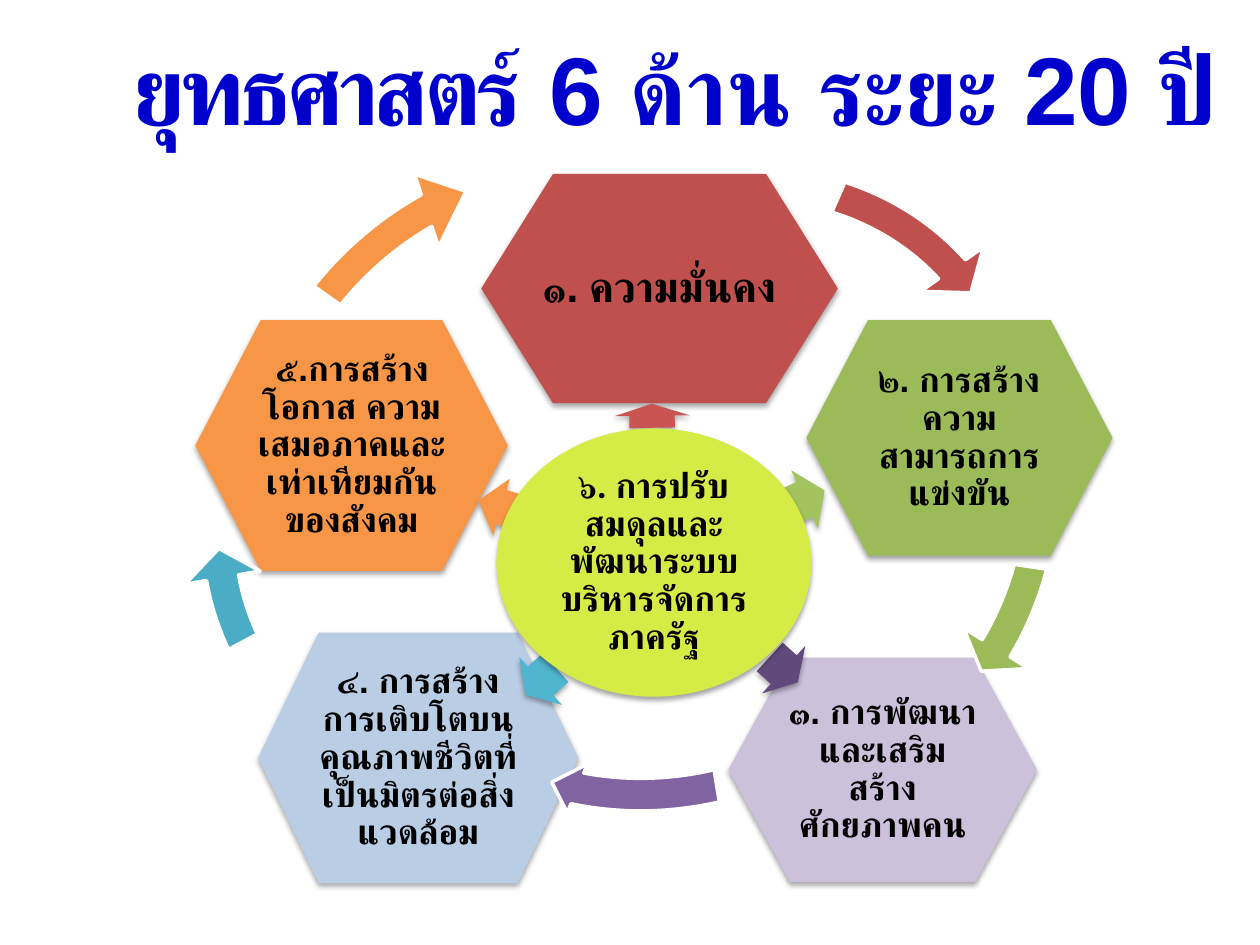
from lxml.etree import SubElement
from pptx import Presentation
from pptx.dml.color import RGBColor
from pptx.enum.shapes import MSO_SHAPE
from pptx.enum.text import MSO_ANCHOR, MSO_AUTO_SIZE, PP_ALIGN
from pptx.oxml.ns import qn
from pptx.util import Inches, Pt

WHITE = RGBColor(0xFF, 0xFF, 0xFF)
BLACK = RGBColor(0x00, 0x00, 0x00)
TITLE_BLUE = RGBColor(0x00, 0x00, 0xCC)
RED = RGBColor(0xC0, 0x50, 0x4D)
LIGHT_RED = RGBColor(0xC9, 0x54, 0x52)
LILAC = RGBColor(0xCC, 0xC1, 0xDA)
PALE_BLUE = RGBColor(0xB9, 0xCD, 0xE5)
ORANGE = RGBColor(0xF7, 0x96, 0x46)
GREEN = RGBColor(0x9B, 0xBB, 0x59)
LIGHT_GREEN = RGBColor(0xA3, 0xC3, 0x5E)
PURPLE = RGBColor(0x80, 0x64, 0xA2)
DARK_PURPLE = RGBColor(0x60, 0x4A, 0x7B)
TEAL = RGBColor(0x4B, 0xAC, 0xC6)
LIGHT_TEAL = RGBColor(0x50, 0xB5, 0xCF)
LIME = RGBColor(0xD5, 0xEC, 0x46)

TITLE = [("ยุทธศาสตร์", -300), (" 6 ด้าน ระยะ 20 ปี", 0)]
CORE = [("๖. ", "Roboto"), ("การปรับสมดุลและพัฒนาระบบบริหารจัดการภาครัฐ", "Arial")]

# text, box, corner indent, margins, size, fill
STRATEGIES = [
    ("๑. ความมั่นคง", (3.82, 1.38, 2.83, 1.82), 0.57, (0.49, 0.41), 24, RED),
    ("๓. การพัฒนาและเสริมสร้างศักยภาพคน", (5.78, 5.22, 2.45, 1.78), 0.49, (0.48, 0.39), 20, LILAC),
    ("๔. การสร้าง\vการเติบโตบนคุณภาพชีวิตที่เป็นมิตรต่อสิ่งแวดล้อม",
     (2.05, 5.02, 2.54, 1.99), 0.48, (0.48, 0.38), 20, PALE_BLUE),
    ("๕.การสร้างโอกาส ความเสมอภาคและเท่าเทียมกันของสังคม",
     (1.55, 2.54, 2.48, 1.99), 0.52, (0.48, 0.41), 20, ORANGE),
    ("๒. การสร้างความสามารถการแข่งขัน", (6.4, 2.54, 2.43, 1.87), 0.49, (0.5, 0.41), 20, GREEN),
]

# box, direction, fill
SPOKES = [
    ((4.13, 5.15, 0.32, 0.51), 138.3, LIGHT_TEAL),
    ((3.79, 3.79, 0.38, 0.47), 196.3, ORANGE),
    ((6.21, 3.71, 0.35, 0.51), 335.5, LIGHT_GREEN),
    ((5.08, 3, 0.19, 0.6), 269.3, LIGHT_RED),
    ((6.07, 5.06, 0.3, 0.51), 42.3, DARK_PURPLE),
]
SPOKE_OUTLINE = [(0, 0.2), (0.5, 0.2), (0.5, 0), (1, 0.5), (0.5, 1), (0.5, 0.8), (0, 0.8)]

# left, top, rotation, adjustments, fill
CYCLE_SIZE = (5.51, 4.98)
CYCLE = [
    (2.95, 1.25, 324.2, (0.052, 3.356, 212.946, 197.617, 0.061), RED),
    (3.16, 1.67, 319.4, (0.052, 3.356, 40.161, 29.454, 0.061), GREEN),
    (2.56, 1.47, 330.8, (0.052, 2.953, 82.123, 65.928, 0.042), PURPLE),
    (1.32, 1.45, 319.4, (0.052, 3.356, 122.994, 115.404, 0.061), TEAL),
    (1.64, 1.13, 321.5, (0.052, 5.437, 168.671, 152.287, 0.061), ORANGE),
]


def paint(shape, fill):
    shape.shadow.inherit = False
    shape.fill.solid()
    shape.fill.fore_color.rgb = fill
    shape.line.fill.background()


def cast_shadow(shape):
    effects = shape._element.spPr.find(qn("a:effectLst"))
    shadow = SubElement(effects, qn("a:outerShdw"), blurRad=str(Pt(3.1)), dist=str(Pt(1.8)),
                        dir="5400000", rotWithShape="0")
    color = SubElement(shadow, qn("a:srgbClr"), val="000000")
    SubElement(color, qn("a:alpha"), val="35000")


def style_run(run, size, color, font="Arial"):
    run.font.size = Pt(size)
    run.font.bold = True
    run.font.color.rgb = color
    run.font.name = font
    SubElement(run._r.get_or_add_rPr(), qn("a:cs"), typeface=font)


def lay_out_label(shape, margins):
    frame = shape.text_frame
    frame.word_wrap = True
    frame.vertical_anchor = MSO_ANCHOR.MIDDLE
    frame.margin_left = frame.margin_right = Inches(margins[0])
    frame.margin_top = frame.margin_bottom = Inches(margins[1])
    label = frame.paragraphs[0]
    label.alignment = PP_ALIGN.CENTER
    label.line_spacing = 0.9
    return label


def add_outline(slide, box, fractions, fill):
    left, top, width, height = box
    points = [(Inches(left + x * width), Inches(top + y * height)) for x, y in fractions]
    builder = slide.shapes.build_freeform(*points[0])
    builder.add_line_segments(points[1:], close=True)
    outline = builder.convert_to_shape()
    paint(outline, fill)
    cast_shadow(outline)
    return outline


def main():
    prs = Presentation()
    prs.slide_width, prs.slide_height = Inches(10), Inches(7.5)
    slide = prs.slides.add_slide(prs.slide_layouts[6])

    backdrop = slide.shapes.add_shape(MSO_SHAPE.RECTANGLE, 0, Inches(-0.06), Inches(10), Inches(7.56))
    paint(backdrop, WHITE)
    backdrop_color = backdrop._element.spPr.find(qn("a:solidFill"))[0]
    SubElement(backdrop_color, qn("a:alpha"), val="25000")

    for text, box, indent, margins, size, fill in STRATEGIES:
        near = indent / box[2]
        far = 1 - near
        corners = [(0, 0.5), (near, 0), (far, 0), (1, 0.5), (far, 1), (near, 1)]
        hexagon = add_outline(slide, box, corners, fill)
        label = lay_out_label(hexagon, margins)
        label.text = text
        for run in label.runs:
            style_run(run, size, BLACK)

    for box, direction, fill in SPOKES:
        add_outline(slide, box, SPOKE_OUTLINE, fill).rotation = direction

    core = slide.shapes.add_shape(MSO_SHAPE.OVAL, *map(Inches, (3.94, 3.4, 2.5, 2.13)))
    paint(core, LIME)
    cast_shadow(core)
    core_label = lay_out_label(core, (0.11, 0.14))
    for text, font in CORE:
        run = core_label.add_run()
        run.text = text
        style_run(run, 20, BLACK, font)

    for left, top, rotation, adjustments, fill in CYCLE:
        arrow = slide.shapes.add_shape(MSO_SHAPE.CIRCULAR_ARROW, Inches(left), Inches(top),
                                       *map(Inches, CYCLE_SIZE))
        paint(arrow, fill)
        arrow.line.color.rgb = WHITE
        arrow.line.width = Pt(2)
        arrow.rotation = rotation
        for index, value in enumerate(adjustments):
            arrow.adjustments[index] = value

    heading = slide.shapes.add_textbox(*map(Inches, (0.59, 0.18, 9.53, 1.03))).text_frame
    heading.word_wrap = True
    heading.auto_size = MSO_AUTO_SIZE.SHAPE_TO_FIT_TEXT
    heading_line = heading.paragraphs[0]
    heading_line.alignment = PP_ALIGN.CENTER
    for text, spacing in TITLE:
        run = heading_line.add_run()
        run.text = text
        style_run(run, 55, TITLE_BLUE)
        run._r.get_or_add_rPr().set("spc", str(spacing))

    prs.save("out.pptx")


if __name__ == "__main__":
    main()
